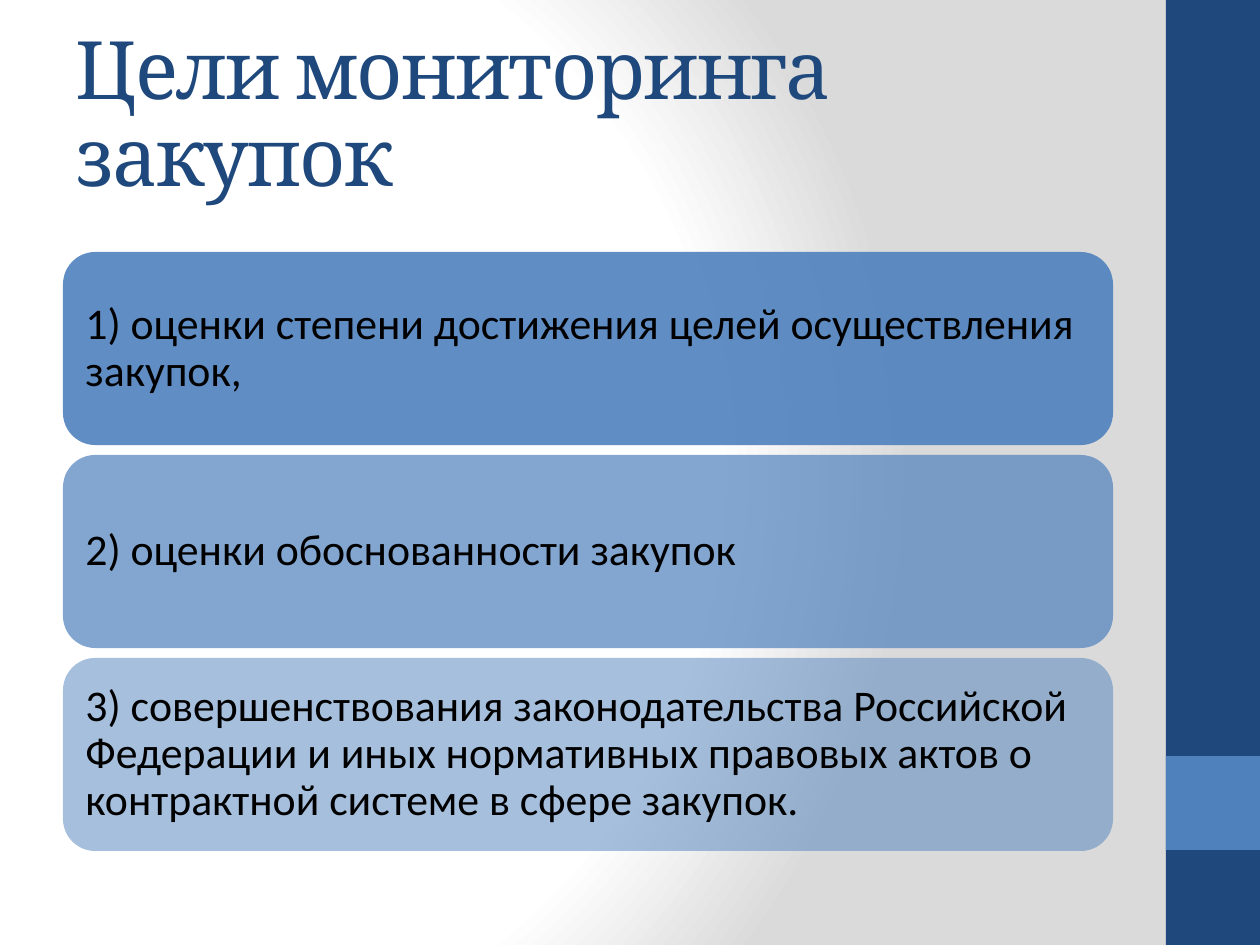
from lxml import etree
from pptx import Presentation, util as u
from pptx.dml.color import RGBColor
from pptx.enum import shapes, text
from pptx.oxml import parse_xml
from pptx.oxml.ns import nsdecls, qn

NAVY, BLUE, BLACK = "1F497D", "4F81BD", "000000"
WHITE, GREY = "FFFFFF", "DADADA"
GOALS = [
    ("1) оценки степени достижения целей осуществления закупок,", 90),
    ("2) оценки обоснованности закупок", 70),
    ("3) совершенствования законодательства Российской Федерации и иных "
     "нормативных правовых актов о контрактной системе в сфере закупок.", 50),
]


def px(length):
    return u.Emu(round(length * 914400 / 126))


def colour(hex_value):
    return RGBColor.from_string(hex_value)


def write(frame, words, *, font, size, color, inset_x=13, inset_y=13, tracking=0):
    frame.word_wrap = True
    frame.auto_size = text.MSO_AUTO_SIZE.NONE
    frame.vertical_anchor = text.MSO_ANCHOR.MIDDLE
    frame.margin_left = frame.margin_right = px(inset_x)
    frame.margin_top = frame.margin_bottom = px(inset_y)
    paragraph = frame.paragraphs[0]
    paragraph.alignment = text.PP_ALIGN.LEFT
    paragraph.line_spacing = 0.9
    run = paragraph.add_run()
    run.text = words
    run.font.name = font
    run.font.size = u.Pt(size)
    run.font.color.rgb = colour(color)
    if tracking:
        run.font._element.set("spc", str(tracking * 100))


def add_block(slide, kind, left, top, width, height, fill, opacity=100):
    block = slide.shapes.add_shape(kind, px(left), px(top), px(width), px(height))
    block.shadow.inherit = False
    block.line.fill.background()
    block.fill.solid()
    block.fill.fore_color.rgb = colour(fill)
    if opacity < 100:
        tint = block._element.spPr.find(".//" + qn("a:srgbClr"))
        etree.SubElement(tint, qn("a:alpha")).set("val", str(opacity * 1000))
    return block


def set_background(slide):
    stops = "".join(
        f'<a:gs pos="{position * 1000}"><a:srgbClr val="{tone}"/></a:gs>'
        for position, tone in [(0, WHITE), (75, WHITE), (100, GREY)])
    background = parse_xml(
        f'<p:bg {nsdecls("p", "a")}><p:bgPr><a:gradFill rotWithShape="1">'
        f'<a:gsLst>{stops}</a:gsLst><a:path path="circle">'
        '<a:fillToRect l="20000" t="50000" r="100000" b="50000"/></a:path>'
        '</a:gradFill><a:effectLst/></p:bgPr></p:bg>')
    slide._element.cSld.insert(0, background)


def set_title(slide, words):
    title = slide.shapes.title
    title.left, title.top, title.width, title.height = map(px, (63, 38, 1050, 157))
    write(title.text_frame, words, font="Cambria", size=46, color=NAVY,
          inset_y=6, tracking=-1)


def add_goals(slide, left=63, top=252, width=1050, height=193, gap=10):
    for row, (goal, opacity) in enumerate(GOALS):
        card = add_block(slide, shapes.MSO_SHAPE.ROUNDED_RECTANGLE, left,
                         top + row * (height + gap), width, height, BLUE, opacity)
        write(card.text_frame, goal, font="Calibri", size=25, color=BLACK)


def main():
    deck = Presentation()
    deck.slide_width, deck.slide_height = px(1260), px(945)
    slide = deck.slides.add_slide(deck.slide_layouts[5])
    set_background(slide)
    add_block(slide, shapes.MSO_SHAPE.RECTANGLE, 1166, 0, 94, 945, NAVY)
    add_block(slide, shapes.MSO_SHAPE.RECTANGLE, 1166, 756, 94, 94, BLUE)
    set_title(slide, "Цели мониторинга закупок")
    add_goals(slide)
    deck.save("out.pptx")


if __name__ == "__main__":
    main()
